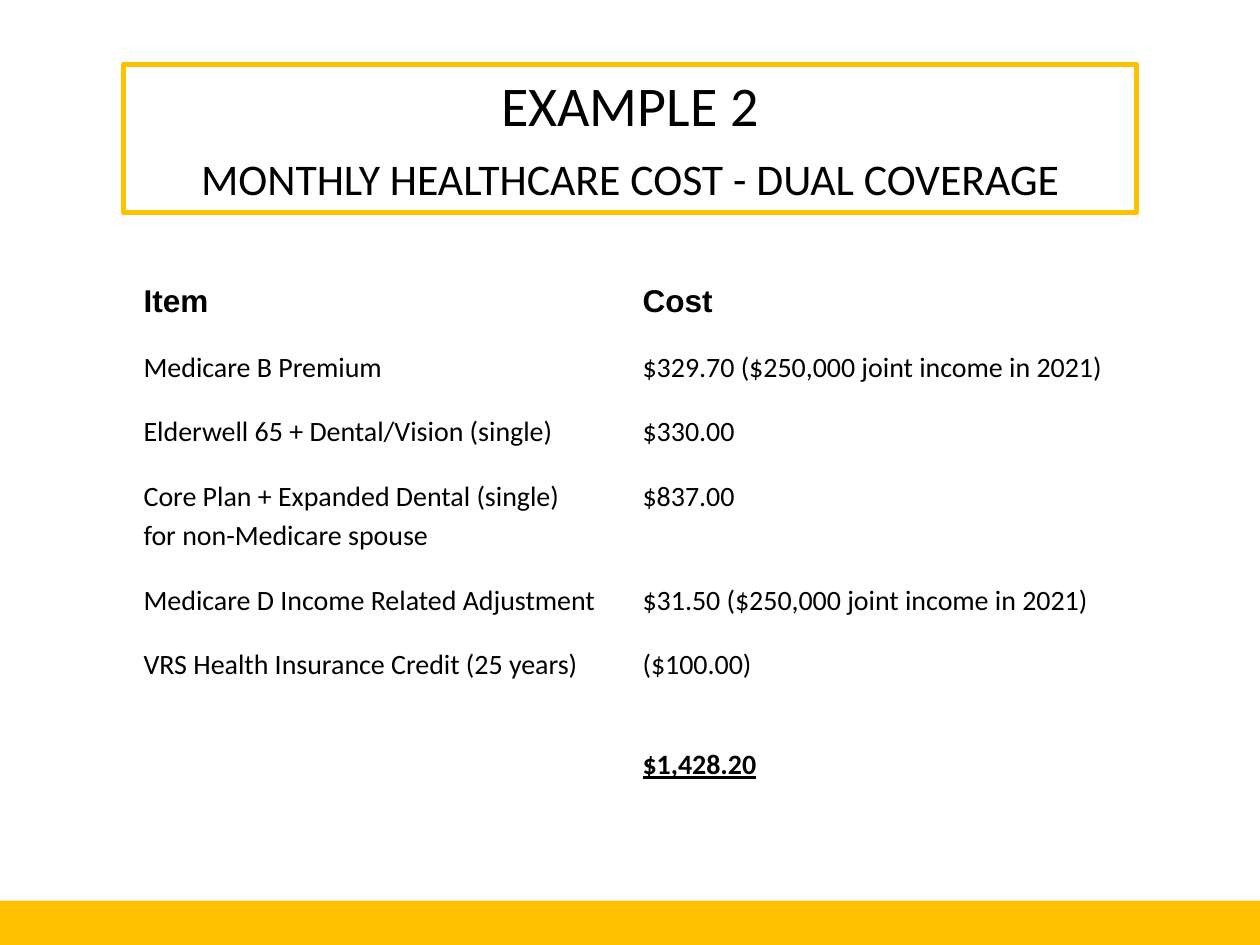
"""Build a slide that lists the monthly healthcare cost of dual coverage."""
from dataclasses import dataclass

from pptx import Presentation
from pptx.dml.color import RGBColor
from pptx.enum.shapes import MSO_SHAPE
from pptx.enum.text import MSO_ANCHOR, PP_ALIGN
from pptx.util import Inches, Pt

RECT = MSO_SHAPE.RECTANGLE
TOP = MSO_ANCHOR.TOP
CENTER = PP_ALIGN.CENTER
WIDTH, HEIGHT = Inches(10), Inches(7.5)
PAD = Inches(0.1)
COLORS = {"gold": "FFC000", "ink": "000000"}


@dataclass(frozen=True)
class Box:
    """Hold a frame as shares of the slide's size."""
    left: float
    top: float
    width: float
    height: float

    def place(self) -> tuple[int, int, int, int]:
        """Return the frame in slide units."""
        return (int(self.left * WIDTH), int(self.top * HEIGHT),
                int(self.width * WIDTH), int(self.height * HEIGHT))


@dataclass(frozen=True)
class Style:
    """Hold the look of a piece of text."""
    size: float
    name: str = "Calibri"
    bold: bool = False
    line: bool = False
    space: float = 1.0


@dataclass(frozen=True)
class Row:
    """Hold one table row, its height and its style."""
    item: str
    cost: str
    style: Style
    height: float = 0.5
    lead: float = 0.1


HEAD = Style(18, "Arial", bold=True)
BODY = Style(16, space=1.15)
TOTAL = Style(16, bold=True, line=True, space=1.15)
BAND = Box(0, 0.953, 1, 0.047)
TITLE = Box(0.098, 0.068, 0.804, 0.157)
GRID = Box(0.104, 0.287, 0.792, 0.535)
LINES = (
    ("EXAMPLE 2", Style(32)),
    ("MONTHLY HEALTHCARE COST - DUAL COVERAGE", Style(25)),
)
ROWS = (
    Row("Item", "Cost", HEAD, 0.49),
    Row("Medicare B Premium", "$329.70 ($250,000 joint income in 2021)", BODY),
    Row("Elderwell 65 + Dental/Vision (single)", "$330.00", BODY),
    Row("Core Plan + Expanded Dental (single)\nfor non-Medicare spouse",
        "$837.00", BODY, 0.82),
    Row("Medicare D Income Related Adjustment",
        "$31.50 ($250,000 joint income in 2021)", BODY),
    Row("VRS Health Insurance Credit (25 years)", "($100.00)", BODY),
    Row("", "$1,428.20", TOTAL, 0.79, 0.38),
)


def tint(key: str) -> RGBColor:
    """Return a named colour."""
    return RGBColor.from_string(COLORS[key])


def dress(para, style: Style) -> None:
    """Apply a style to a paragraph."""
    para.line_spacing = style.space
    for font in (para.font, *(run.font for run in para.runs)):
        font.size, font.name = Pt(style.size), style.name
        font.bold, font.underline = style.bold, style.line
        font.color.rgb = tint("ink")


def draw_band(slide, box: Box) -> None:
    """Draw the solid band at the foot."""
    band = slide.shapes.add_shape(RECT, *box.place())
    band.shadow.inherit = False
    band.fill.solid()
    band.fill.fore_color.rgb = tint("gold")
    band.line.fill.background()


def draw_title(slide, box: Box) -> None:
    """Draw the framed heading."""
    title = slide.shapes.add_shape(RECT, *box.place())
    title.shadow.inherit = False
    title.fill.background()
    title.line.color.rgb = tint("gold")
    title.line.width = Pt(3)
    frame = title.text_frame
    frame.word_wrap = True
    frame.vertical_anchor = TOP
    frame.text = "\n".join(text for text, _ in LINES)
    for para, (_, style) in zip(frame.paragraphs, LINES):
        para.alignment = CENTER
        dress(para, style)
    frame.paragraphs[1].space_before = Pt(8)


def draw_grid(slide, box: Box) -> None:
    """Draw the table of costs."""
    table = slide.shapes.add_table(len(ROWS), 2, *box.place()).table
    table.first_row = table.horz_banding = False
    for index, row in enumerate(ROWS):
        table.rows[index].height = Inches(row.height)
        for cell, text in zip(table.rows[index].cells, (row.item, row.cost)):
            cell.fill.background()
            cell.margin_left = cell.margin_right = cell.margin_bottom = PAD
            cell.margin_top = Inches(row.lead)
            cell.text_frame.text = text
            for para in cell.text_frame.paragraphs:
                dress(para, row.style)


def main() -> None:
    """Build and save the slide."""
    deck = Presentation()
    deck.slide_width, deck.slide_height = WIDTH, HEIGHT
    slide = deck.slides.add_slide(deck.slide_layouts[6])
    draw_band(slide, BAND)
    draw_grid(slide, GRID)
    draw_title(slide, TITLE)
    deck.save("out.pptx")


if __name__ == "__main__":
    main()
